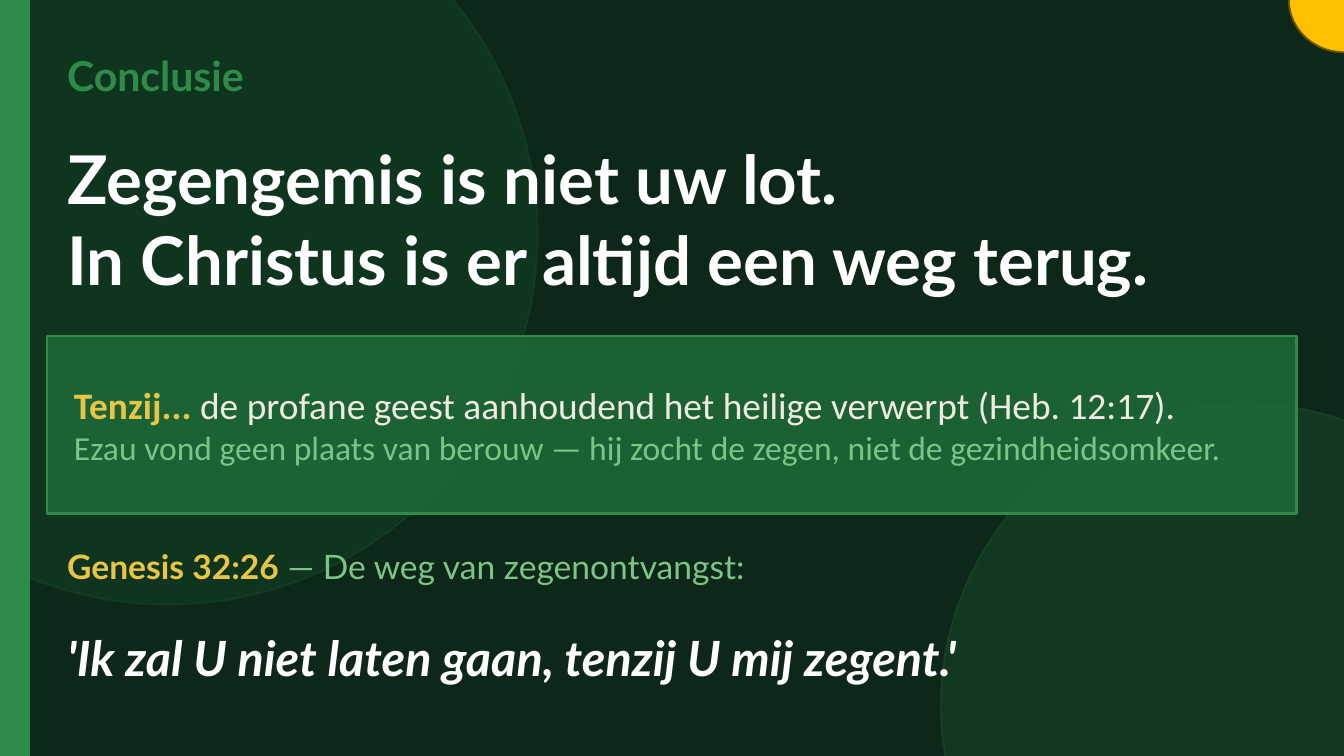
from lxml import etree
from pptx import Presentation
from pptx import util as u
from pptx.dml.color import RGBColor
from pptx.enum import shapes, text
from pptx.oxml.ns import qn

PX = u.Inches(1) // 200  # 200 px to the inch
SLIDE_BOX = (0, 0, 2000, 1125)
COLORS = {
    "night": "0D2818", "forest": "1E6B3A", "green": "2E8B4A",
    "mint": "7DC487", "gold": "E8C547", "cream": "F0EBE0",
    "white": "FFFFFF", "sun": "FFC000", "sun_edge": "705400",
}
RECT = shapes.MSO_SHAPE.RECTANGLE
OVAL = shapes.MSO_SHAPE.OVAL


def rgb(name):
    return RGBColor.from_string(COLORS[name])


def emu(box):
    return [u.Emu(length * PX) for length in box]


def set_alpha(fill_parent, percent):
    color = fill_parent.find(qn("a:solidFill"))[0]
    etree.SubElement(color, qn("a:alpha"), val=str(percent * 1000))


def add_figure(slide, kind, box, fill, edge, width=1, fill_alpha=100, edge_alpha=100):
    figure = slide.shapes.add_shape(kind, *emu(box))
    figure.shadow.inherit = False
    figure.fill.solid()
    figure.fill.fore_color.rgb = rgb(fill)
    figure.line.color.rgb = rgb(edge)
    figure.line.width = u.Pt(width)
    properties = figure._element.spPr
    if fill_alpha < 100:
        set_alpha(properties, fill_alpha)
    if edge_alpha < 100:
        set_alpha(properties.find(qn("a:ln")), edge_alpha)


def add_words(slide, box):
    frame = slide.shapes.add_textbox(*emu(box)).text_frame
    frame.word_wrap = True
    frame.vertical_anchor = text.MSO_ANCHOR.MIDDLE
    frame.margin_left = frame.margin_right = 0
    frame.margin_top = frame.margin_bottom = 0
    return frame


def style(run, size, color, face="Lato", bold=False, italic=False):
    run.font.size = u.Pt(size)
    run.font.name = face
    run.font.bold = bold
    run.font.italic = italic
    run.font.color.rgb = rgb(color)


def add_run(paragraph, words, *look, **options):
    run = paragraph.add_run()
    run.text = words
    style(run, *look, **options)


def draw_backdrop(slide, box):
    left, top, width, height = box
    # Large translucent circles
    for x, y, size, color, alpha in (
        (-300, -200, 1100, "forest", 20),
        (1400, 600, 900, "green", 17),
    ):
        add_figure(slide, OVAL, (left + x, top + y, size, size), color, color,
                   fill_alpha=alpha, edge_alpha=alpha)
    # Side bar
    add_figure(slide, RECT, (left, top, 44, height), "green", "green")


def draw_heading(slide, box):
    left, top, width, height = box
    # Section label above the two-line statement
    label = add_words(slide, (left, top, width, 110))
    label.text = "Conclusie"
    style(label.paragraphs[0].runs[0], 22, "green", bold=True)

    statement = add_words(slide, (left, top + 124, width, height - 124))
    statement.text = "Zegengemis is niet uw lot.\nIn Christus is er altijd een weg terug."
    for line in statement.paragraphs:
        style(line.runs[0], 36, "white", bold=True)


def draw_warning(slide, box):
    left, top, width, height = box
    # Panel
    add_figure(slide, RECT, box, "forest", "green", width=1.5, fill_alpha=85)
    # Exception and its explanation
    warning = add_words(slide, (left + 40, top + 20, width - 60, height - 40))
    exception = warning.paragraphs[0]
    add_run(exception, "Tenzij... ", 20, "gold", "Calibri", bold=True)
    add_run(exception, "de profane geest aanhoudend het heilige verwerpt (Heb. 12:17).",
            20, "cream", "Calibri")
    exception.add_line_break()
    add_run(exception, "Ezau vond geen plaats van berouw — hij zocht de zegen, "
            "niet de gezindheidsomkeer.", 18, "mint", "Calibri")


def draw_verse(slide, box):
    left, top, width, height = box
    # Reference
    reference = add_words(slide, (left, top, width, 84)).paragraphs[0]
    add_run(reference, "Genesis 32:26", 18, "gold", bold=True)
    add_run(reference, " — De weg van zegenontvangst:", 18, "mint")
    # Quotation
    quotation = add_words(slide, (left, top + 100, width, height - 100))
    quotation.text = "'Ik zal U niet laten gaan, tenzij U mij zegent.'"
    style(quotation.paragraphs[0].runs[0], 26, "white", bold=True, italic=True)


def draw_sun(slide, box):
    add_figure(slide, OVAL, box, "sun", "sun_edge")


def main():
    deck = Presentation()
    deck.slide_width, deck.slide_height = emu(SLIDE_BOX[2:])
    conclusion = deck.slides.add_slide(deck.slide_layouts[6])
    conclusion.background.fill.solid()
    conclusion.background.fill.fore_color.rgb = rgb("night")

    draw_backdrop(conclusion, SLIDE_BOX)
    draw_heading(conclusion, (100, 56, 1800, 414))
    draw_warning(conclusion, (70, 500, 1860, 264))
    draw_verse(conclusion, (100, 800, 1800, 256))
    draw_sun(conclusion, (1918, -78, 166, 156))
    deck.save("out.pptx")


if __name__ == "__main__":
    main()
